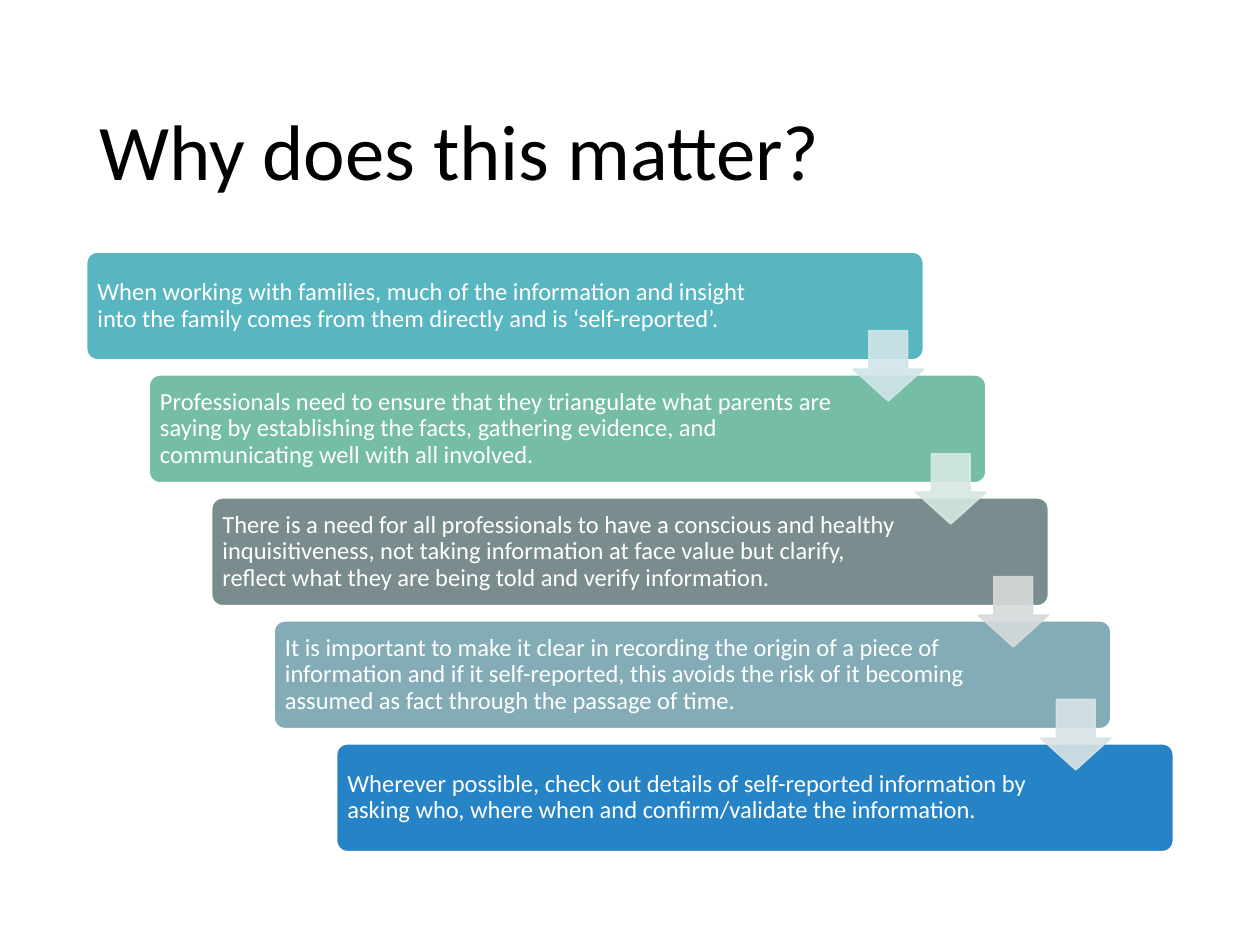
from lxml import etree
from pptx import Presentation
from pptx.dml.color import RGBColor
from pptx.enum.shapes import MSO_SHAPE
from pptx.enum.text import MSO_ANCHOR, MSO_AUTO_SIZE, PP_ALIGN
from pptx.oxml.ns import qn
from pptx.util import Pt

ROUNDED = MSO_SHAPE.ROUNDED_RECTANGLE
DOWN_ARROW = MSO_SHAPE.DOWN_ARROW
MIDDLE = MSO_ANCHOR.MIDDLE
LEFT = PP_ALIGN.LEFT
NO_AUTOFIT = MSO_AUTO_SIZE.NONE
TITLE_ONLY = 5
FONT = "Calibri"

COLORS = {
    "white": "FFFFFF", "black": "000000",
    "teal": "58B6C0", "green": "75BDA7", "slate": "7A8C8E",
    "steel": "84ACB6", "blue": "2683C6",
    "pale teal": "D1E5E8", "pale green": "D6E8E1",
    "pale slate": "D7DADB", "pale steel": "D9E3E5",
}

STEPS = [
    ("teal", "When working with families, much of the information and insight "
     "into the family comes from them directly and is ‘self-reported’."),
    ("green", "Professionals need to ensure that they triangulate what parents are "
     "saying by establishing the facts, gathering evidence, and "
     "communicating well with all involved."),
    ("slate", "There is a need for all professionals to have a conscious and healthy "
     "inquisitiveness, not taking information at face value but clarify, "
     "reflect what they are being told and verify information."),
    ("steel", "It is important to make it clear in recording the origin of a piece of "
     "information and if it self-reported, this avoids the risk of it becoming "
     "assumed as fact through the passage of time."),
    ("blue", "Wherever possible, check out details of self-reported information by "
     "asking who, where when and confirm/validate the information."),
]


def color(name):
    return RGBColor.from_string(COLORS[name])


def write_text(frame, text, size, color_name):
    frame.word_wrap = True
    frame.auto_size = NO_AUTOFIT
    frame.vertical_anchor = MIDDLE
    para = frame.paragraphs[0]
    para.text = text
    para.alignment = LEFT
    para.line_spacing = 0.9
    para.font.name = FONT
    para.font.size = Pt(size)
    para.font.color.rgb = color(color_name)


def add_block(page, kind, left, top, width, height, fill, line, adjustments):
    block = page.shapes.add_shape(kind, Pt(left), Pt(top), Pt(width), Pt(height))
    block.shadow.inherit = False
    for index, value in enumerate(adjustments):
        block.adjustments[index] = value
    block.fill.solid()
    block.fill.fore_color.rgb = color(fill)
    block.line.color.rgb = color(line)
    block.line.width = Pt(1)
    return block


def set_opacity(block, percent):
    """Apply one opacity to both fill and outline."""
    for tint in block.element.spPr.iter(qn("a:srgbClr")):
        etree.SubElement(tint, qn("a:alpha"), val=str(percent * 1000))


def add_title(page, left, top, width, height):
    title = page.shapes.title
    title.left, title.top = Pt(left), Pt(top)
    title.width, title.height = Pt(width), Pt(height)
    write_text(title.text_frame, "Why does this matter?", 45, "black")


def add_staircase(page, left, top, width, height):
    """Stagger the steps from top left to bottom right, joined by arrows."""
    step_width, step_height = width * 0.77, height * 0.18
    shift = (width - step_width) / (len(STEPS) - 1)
    drop = (height - step_height) / (len(STEPS) - 1)
    arrow_size = step_height * 0.65

    for index, (fill, text) in enumerate(STEPS):
        step = add_block(page, ROUNDED, left + index * shift, top + index * drop,
                         step_width, step_height, fill, "white", [0.1])
        frame = step.text_frame
        frame.margin_left = frame.margin_top = frame.margin_bottom = Pt(4.4)
        frame.margin_right = Pt(79)
        write_text(frame, text, 14, "white")

    for index, (fill, _) in enumerate(STEPS[:-1]):
        pale = "pale " + fill
        arrow = add_block(page, DOWN_ARROW,
                          left + index * shift + step_width - arrow_size,
                          top + index * drop + step_height * 0.73,
                          arrow_size, arrow_size, pale, pale, [0.55, 0.45])
        set_opacity(arrow, 90)


def main():
    deck = Presentation()
    deck.slide_width, deck.slide_height = Pt(720), Pt(540)
    page = deck.slides.add_slide(deck.slide_layouts[TITLE_ONLY])
    page.background.fill.solid()
    page.background.fill.fore_color.rgb = color("white")
    add_title(page, 49.5, 44, 621, 89.5)
    add_staircase(page, 49.5, 144, 621, 342.7)
    deck.save("out.pptx")


if __name__ == "__main__":
    main()
